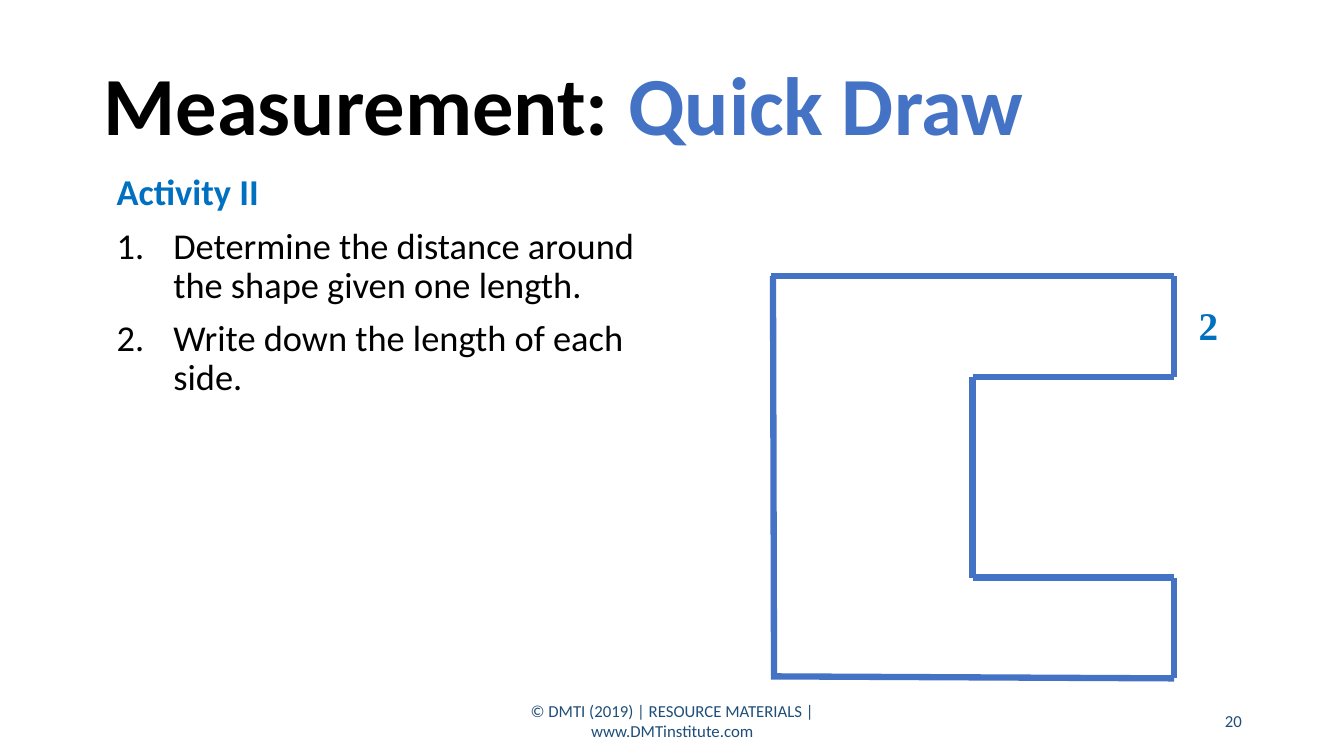
from lxml import etree
from pptx import Presentation
from pptx.dml.color import RGBColor
from pptx.enum.shapes import MSO_CONNECTOR
from pptx.enum.text import MSO_ANCHOR, PP_ALIGN
from pptx.oxml.ns import qn
from pptx.util import Cm, Pt

LEFT, CENTER, RIGHT = PP_ALIGN.LEFT, PP_ALIGN.CENTER, PP_ALIGN.RIGHT
TOP, MIDDLE = MSO_ANCHOR.TOP, MSO_ANCHOR.MIDDLE
STRAIGHT = MSO_CONNECTOR.STRAIGHT

BLACK, BLUE, ACCENT, NAVY = "000000", "4472C4", "0070C0", "1F4E79"
SANS, SERIF = "Calibri", "Times New Roman"
UNIT = 2.54  # cm per unit of the drawn shape

# Ends of each side in units from the top left corner; two are slightly slanted
SIDES = [
    ((0, 3.97), (4, 3.99)),
    ((2, 1), (4, 1)),
    ((0.02, 0), (0.03, 3.97)),
    ((4, 0), (4, 1)),
    ((2, 1), (2, 2.99)),
    ((2, 2.99), (4, 2.99)),
    ((0, 0), (4, 0)),
    ((4, 2.99), (4, 3.99)),
]


def color(hex_string):
    return RGBColor.from_string(hex_string)


def add_frame(page, box, anchor=TOP):
    frame = page.shapes.add_textbox(*(Cm(length) for length in box)).text_frame
    frame.word_wrap = True
    frame.vertical_anchor = anchor
    return frame


def style(para, size, hex_string, bold=False, font=SANS, align=LEFT):
    para.alignment = align
    para.font.name = font
    para.font.size = Pt(size)
    para.font.bold = bold
    para.font.color.rgb = color(hex_string)


def number(para):
    properties = para._p.get_or_add_pPr()
    properties.set("marL", str(Cm(1.43)))
    properties.set("indent", str(-Cm(1.43)))
    etree.SubElement(properties, qn("a:buFont"), typeface="+mj-lt")
    etree.SubElement(properties, qn("a:buAutoNum"), type="arabicPeriod")


def add_title(page, box, topic, activity):
    para = add_frame(page, box, MIDDLE).paragraphs[0]
    para.line_spacing = 0.9
    style(para, 59, BLACK, bold=True)
    para.add_run().text = topic
    span = para.add_run()
    span.text = activity
    span.font.color.rgb = color(BLUE)


def add_instructions(page, box, heading, steps):
    frame = add_frame(page, box)
    para = frame.paragraphs[0]
    para.text = heading
    para.line_spacing = 0.9
    style(para, 26, ACCENT, bold=True)
    for step in steps:
        para = frame.add_paragraph()
        para.text = step
        para.line_spacing = 0.9
        para.space_before = Pt(10)
        number(para)
        style(para, 26, BLACK)


def add_figure(page, left, top, length):
    # Outline
    for start, end in SIDES:
        ends = [Cm(origin + UNIT * step) for point in (start, end)
                for origin, step in zip((left, top), point)]
        side = page.shapes.add_connector(STRAIGHT, *ends)
        side.line.color.rgb = color(BLUE)
        side.line.width = Pt(4.5)
        etree.SubElement(side._element.spPr, qn("a:effectLst"))

    # Given length, right of the upper arm
    label = add_frame(page, (left + 4 * UNIT, top + 0.5, 1.73, 1.45)).paragraphs[0]
    label.text = length
    style(label, 28, ACCENT, bold=True, font=SERIF, align=CENTER)


def add_footer(page, top, credit, page_number):
    for left, width, text, align in ((11.23, 11.43, credit, CENTER),
                                     (23.93, 7.62, page_number, RIGHT)):
        para = add_frame(page, (left, top, width, 1.02), MIDDLE).paragraphs[0]
        para.text = text
        style(para, 12, NAVY, align=align)


def main():
    deck = Presentation()
    deck.slide_width, deck.slide_height = Cm(33.87), Cm(19.05)
    page = deck.slides.add_slide(deck.slide_layouts[6])
    add_title(page, (2.36, 0.91, 29.21, 3.68), "Measurement: ", "Quick Draw")
    add_footer(page, 17.65, "© DMTI (2019) | RESOURCE MATERIALS | www.DMTinstitute.com", "20")
    add_instructions(page, (2.69, 4.27, 13.74, 12.12), "Activity II", [
        "Determine the distance around the shape given one length.",
        "Write down the length of each side.",
    ])
    add_figure(page, 19.43, 6.96, "2")
    deck.save("out.pptx")


if __name__ == "__main__":
    main()
